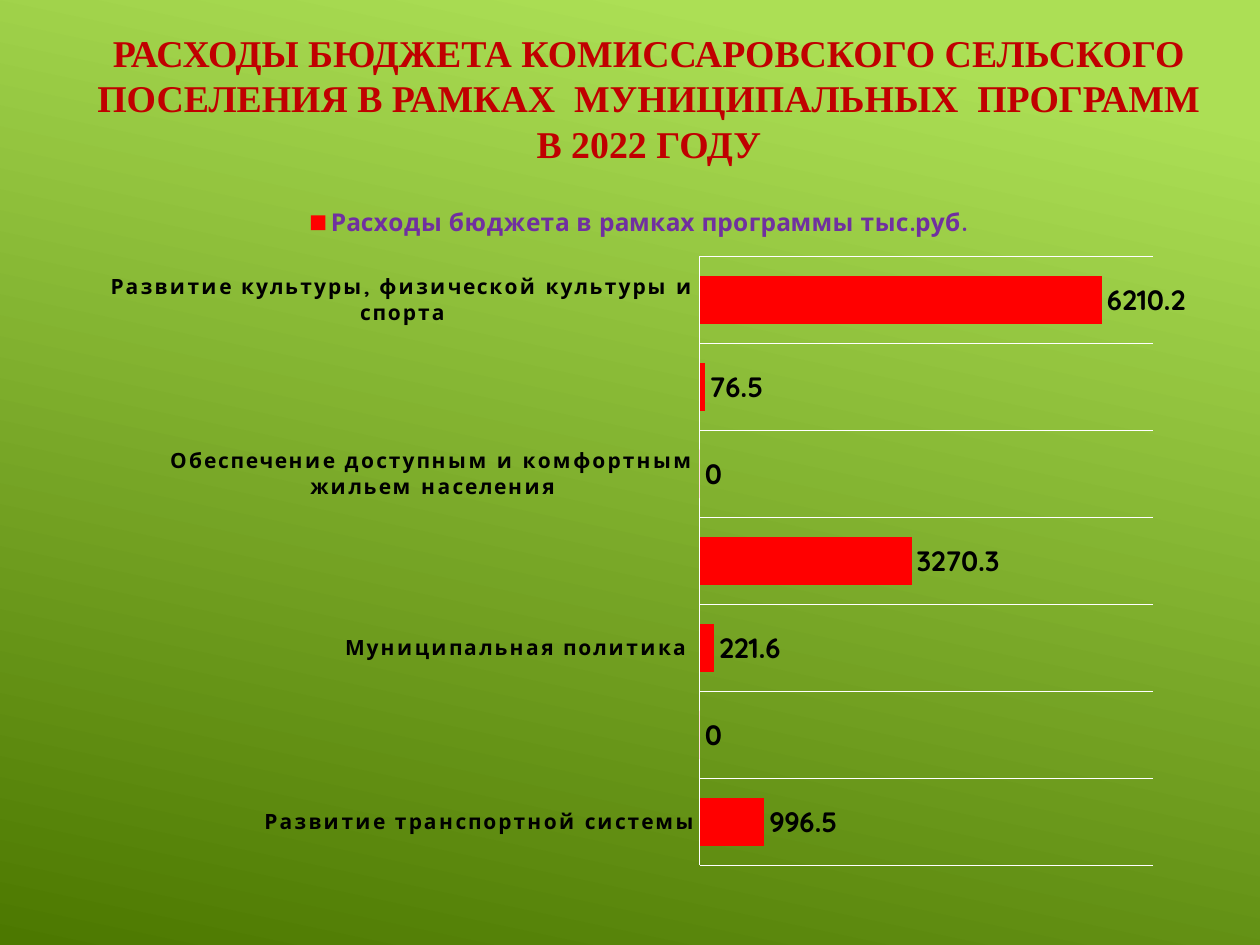
from pptx import Presentation
from pptx.chart import data
from pptx.dml.color import RGBColor
from pptx.enum import chart as ch, text
from pptx.oxml import parse_xml
from pptx.oxml.ns import nsdecls
from pptx.util import Pt

COLORS = {"light": "ACDF55", "dark": "4C7800", "title": "C00000", "bar": "FF0000",
          "legend": "7030A0", "label": "000000", "line": "FFFFFF"}
CHART_FONT = "Quicksand"
PROGRAMS = [
    ("Развитие транспортной системы", 996.5),
    ("Управление муниципальными финансами", 0),
    ("Муниципальная политика ", 221.6),
    ("Благоустройство территории и жилищно коммунальное хозяйство", 3270.3),
    ("Обеспечение доступным и комфортным жильем населения", 0),
    ("Обеспечение пожарной безапасности и безопасности людей на водных объектах, "
     "профилактика экстремизма и терроризма на территории "
     "Комиссаровского сельского поселения", 76.5),
    ("Развитие культуры, физической культуры и спорта", 6210.2),
]


def style_font(font, size, color, name=CHART_FONT, bold=True):
    font.size = Pt(size)
    font.bold = bold
    font.name = name
    font.color.rgb = RGBColor.from_string(COLORS[color])


prs = Presentation()
prs.slide_width, prs.slide_height = Pt(720), Pt(540)
slide = prs.slides.add_slide(prs.slide_layouts[5])

# Background gradient
background = slide.background.fill
background.gradient()
background.gradient_angle = 258
for stop, color, position in zip(background.gradient_stops, ("light", "dark"), (0.1, 1)):
    stop.color.rgb = RGBColor.from_string(COLORS[color])
    stop.position = position

# Title
title = slide.shapes.title
title.left, title.top, title.width, title.height = Pt(41.8), Pt(23.8), Pt(658), Pt(64)
frame = title.text_frame
frame.word_wrap = True
frame.auto_size = text.MSO_AUTO_SIZE.NONE
frame.vertical_anchor = text.MSO_ANCHOR.MIDDLE
heading = frame.paragraphs[0]
heading.alignment = text.PP_ALIGN.CENTER
run = heading.add_run()
run.text = ("РАСХОДЫ БЮДЖЕТА КОМИССАРОВСКОГО СЕЛЬСКОГО ПОСЕЛЕНИЯ "
            "В РАМКАХ  МУНИЦИПАЛЬНЫХ  ПРОГРАММ В 2022 ГОДУ")
style_font(run.font, 21.6, "title", "Times New Roman")

# Spending by programme
spending = data.CategoryChartData()
spending.categories = [name for name, _ in PROGRAMS]
spending.add_series("Расходы бюджета в рамках программы тыс.руб.",
                    [amount for _, amount in PROGRAMS])
chart = slide.shapes.add_chart(ch.XL_CHART_TYPE.BAR_CLUSTERED, Pt(54), Pt(110.2),
                               Pt(623.5), Pt(392.4), spending).chart
style_font(chart.font, 10, "line", bold=False)
chart.has_title = False
chart.has_legend = True
chart.legend.position = ch.XL_LEGEND_POSITION.TOP
chart.legend.include_in_layout = False
style_font(chart.legend.font, 14, "legend")

# Bars and value labels
bars = chart.plots[0]
bars.gap_width = 79
bars.vary_by_categories = False
fill = bars.series[0].format.fill
fill.solid()
fill.fore_color.rgb = RGBColor.from_string(COLORS["bar"])
bars.has_data_labels = True
labels = bars.data_labels
labels.show_value = True
labels.number_format, labels.number_format_is_linked = "General", False
labels.position = ch.XL_LABEL_POSITION.OUTSIDE_END
style_font(labels.font, 16, "label")

# Axes
programs = chart.category_axis
programs.major_tick_mark = programs.minor_tick_mark = ch.XL_TICK_MARK.NONE
programs.has_major_gridlines = True
for rule in (programs.format.line, programs.major_gridlines.format.line):
    rule.width = Pt(0.75)
    rule.color.rgb = RGBColor.from_string(COLORS["line"])
style_font(programs.tick_labels.font, 12, "label")
for properties in programs._element.xpath("c:txPr//a:defRPr"):
    properties.set("spc", "120")
amounts = chart.value_axis
amounts.has_major_gridlines = False
amounts.minimum_scale, amounts.maximum_scale = 0, 7000
amounts.visible = False

# Kerning in all chart text
for properties in chart._chartSpace.xpath(".//a:defRPr"):
    properties.set("kern", "1200")

# Plot area position, as shares of the chart
plot_area = chart._chartSpace.chart.plotArea
for layout in plot_area.xpath("c:layout"):
    plot_area.remove(layout)
shares = "".join(f'<c:{key} val="{value}"/>' for key, value in (
    ("layoutTarget", "inner"), ("xMode", "edge"), ("yMode", "edge"),
    ("x", 0.5555), ("y", 0.0927), ("w", 0.416), ("h", 0.887)))
plot_area.insert(0, parse_xml(
    f'<c:layout {nsdecls("c")}><c:manualLayout>{shares}</c:manualLayout></c:layout>'))

prs.save("out.pptx")
